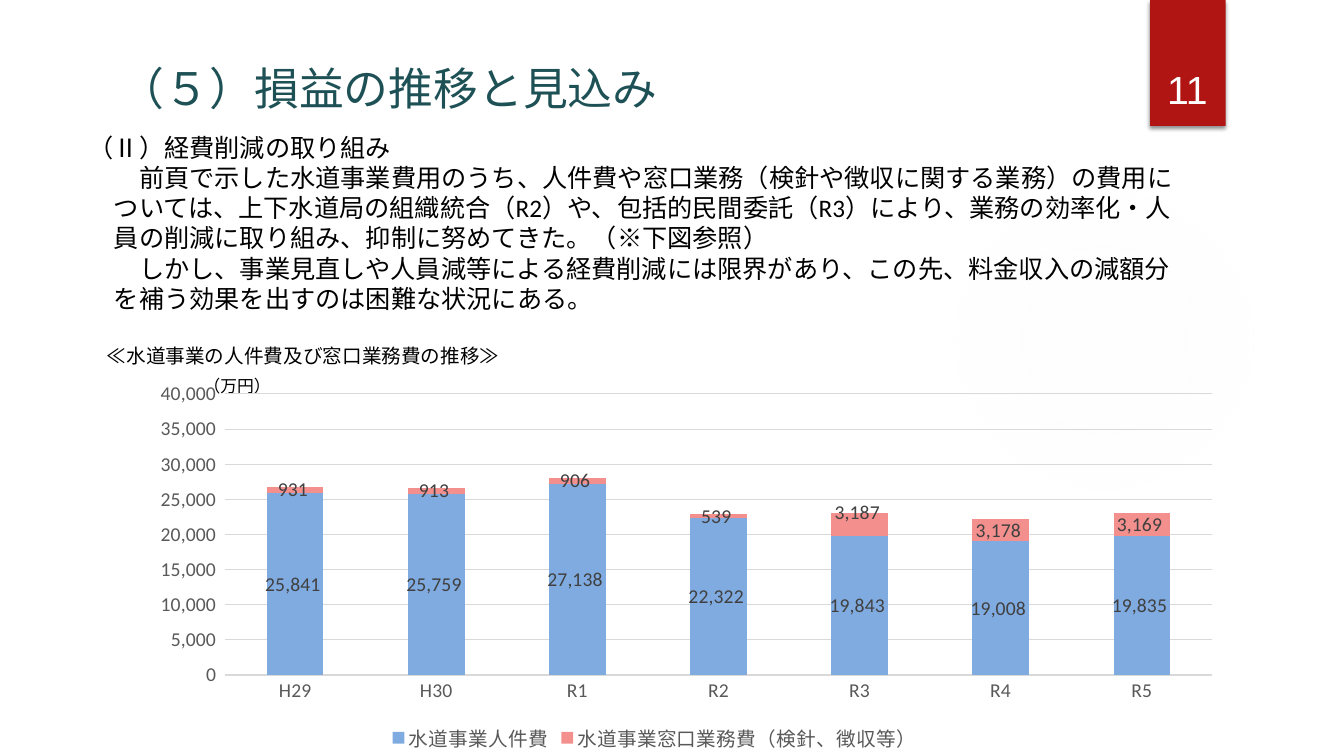
from dataclasses import dataclass

from lxml import etree
from pptx import Presentation
from pptx import util as u
from pptx.chart import data as chart_data
from pptx.dml.color import RGBColor
from pptx.enum import chart as chart_enum
from pptx.enum import shapes, text
from pptx.oxml import parse_xml
from pptx.oxml.ns import nsdecls, qn

Pt = u.Pt
NUMBER_FORMAT = r"#,##0_);[Red]\(#,##0\)"


@dataclass
class Box:
    left: float
    top: float
    width: float
    height: float

    def lengths(self) -> tuple:
        return Pt(self.left), Pt(self.top), Pt(self.width), Pt(self.height)


@dataclass
class Line:
    wording: str
    size: float
    face: str = "Calibri"
    color: str = "000000"
    indent: float = 0
    centered: bool = False


@dataclass
class Caption:
    box: Box
    line: Line


@dataclass
class Cost:
    name: str
    values: tuple
    color: str


def rgb(value: str) -> RGBColor:
    return RGBColor.from_string(value)


def style_font(font, size: float, color: str, face: str = "Calibri") -> None:
    font.size, font.name = Pt(size), face
    font.color.rgb = rgb(color)


def write_line(paragraph, line: Line) -> None:
    paragraph.text = line.wording
    if line.indent:
        paragraph._p.get_or_add_pPr().set("marL", str(Pt(line.indent)))
    if line.centered:
        paragraph.alignment = text.PP_ALIGN.CENTER
    style_font(paragraph.font, line.size, line.color, line.face)


def add_text(slide, box: Box, lines: list[Line], right_inset: float = 7.2) -> None:
    frame = slide.shapes.add_textbox(*box.lengths()).text_frame
    frame.word_wrap = True
    frame.margin_right = Pt(right_inset)
    frame.vertical_anchor = text.MSO_ANCHOR.BOTTOM
    for index, line in enumerate(lines):
        write_line(frame.add_paragraph() if index else frame.paragraphs[0], line)


def add_caption(slide, caption: Caption) -> None:
    table = slide.shapes.add_table(1, 1, *caption.box.lengths()).table
    table.first_row = table.horz_banding = False
    cell = table.cell(0, 0)
    cell.fill.background()
    cell.margin_left = cell.margin_right = cell.margin_top = cell.margin_bottom = 0
    cell.vertical_anchor = text.MSO_ANCHOR.MIDDLE
    write_line(cell.text_frame.paragraphs[0], caption.line)


def add_plain_shape(slide, kind, box: Box):
    shape = slide.shapes.add_shape(kind, *box.lengths())
    shape.shadow.inherit = False
    shape.line.fill.background()
    return shape


def add_glow(slide, box: Box) -> None:
    glow = add_plain_shape(slide, shapes.MSO_SHAPE.OVAL, box)
    stops = "".join(
        f'<a:gs pos="{position * 1000}"><a:srgbClr val="F3F3F3">'
        f'<a:alpha val="{alpha * 1000}"/></a:srgbClr></a:gs>'
        for position, alpha in ((0, 7), (36, 6), (69, 0))
    )
    glow._element.spPr.find(qn("a:prstGeom")).addnext(parse_xml(
        f'<a:gradFill {nsdecls("a")}><a:gsLst>{stops}</a:gsLst><a:path path="circle">'
        '<a:fillToRect l="50000" t="50000" r="50000" b="50000"/></a:path></a:gradFill>'
    ))


def add_ribbon(slide, box: Box) -> None:
    ribbon = add_plain_shape(slide, shapes.MSO_SHAPE.RECTANGLE, box)
    ribbon.fill.solid()
    ribbon.fill.fore_color.rgb = rgb("B01513")
    ribbon._element.spPr.find(qn("a:effectLst")).append(parse_xml(
        f'<a:outerShdw {nsdecls("a")} blurRad="{Pt(3)}" dist="{Pt(2)}" dir="5400000">'
        '<a:srgbClr val="000000"><a:alpha val="45000"/></a:srgbClr></a:outerShdw>'
    ))


def manual_layout(**settings):
    layout = etree.Element(qn("c:layout"))
    manual = etree.SubElement(layout, qn("c:manualLayout"))
    for tag, value in settings.items():
        etree.SubElement(manual, qn(f"c:{tag}")).set("val", str(value))
    return layout


def style_line(line, color: str) -> None:
    line.width = Pt(0.75)
    line.color.rgb = rgb(color)


def raise_label(series, index: int, offset: float) -> None:
    style_font(series.points[index].data_label.font, 14, "404040")
    label = series._element.find(f".//{qn('c:dLbl')}")
    label.insert(1, manual_layout(x=0, y=offset))
    number_format = etree.Element(qn("c:numFmt"))
    number_format.set("formatCode", NUMBER_FORMAT)
    number_format.set("sourceLinked", "0")
    label.insert(2, number_format)


def add_cost_chart(slide, box: Box, years: list[str], costs: list[Cost]) -> None:
    data = chart_data.CategoryChartData(number_format=NUMBER_FORMAT)
    data.categories = years
    for cost in costs:
        data.add_series(cost.name, cost.values)
    chart = slide.shapes.add_chart(
        chart_enum.XL_CHART_TYPE.COLUMN_STACKED, *box.lengths(), data
    ).chart
    style_font(chart.font, 10, "000000")
    chart.has_title = False
    chart.has_legend = True
    chart.legend.position = chart_enum.XL_LEGEND_POSITION.BOTTOM
    chart.legend.include_in_layout = False
    style_font(chart.legend.font, 14, "595959")

    for axis in (chart.category_axis, chart.value_axis):
        axis.major_tick_mark = axis.minor_tick_mark = chart_enum.XL_TICK_MARK.NONE
        style_font(axis.tick_labels.font, 14, "595959")
    style_line(chart.category_axis.format.line, "D9D9D9")
    amounts = chart.value_axis
    amounts.minimum_scale, amounts.maximum_scale, amounts.major_unit = 0, 40000, 5000
    amounts.format.line.fill.background()
    style_line(amounts.major_gridlines.format.line, "D9D9D9")
    amounts.tick_labels.number_format = NUMBER_FORMAT
    amounts.tick_labels.number_format_is_linked = False

    plot = chart.plots[0]
    plot.gap_width, plot.overlap, plot.vary_by_categories = 150, 100, False
    for series, cost in zip(plot.series, costs):
        series.format.fill.solid()
        series.format.fill.fore_color.rgb = rgb(cost.color)
        labels = series.data_labels
        labels.show_value = True
        labels.number_format = NUMBER_FORMAT
        labels.number_format_is_linked = False
        style_font(labels.font, 14, "404040")
    raise_label(plot.series[1], years.index("R3"), -0.03)

    area = chart._chartSpace.find(f".//{qn('c:plotArea')}")
    for layout in area.findall(qn("c:layout")):
        area.remove(layout)
    area.insert(0, manual_layout(
        layoutTarget="inner", xMode="edge", yMode="edge", x=0.13, y=0.06, w=0.85, h=0.73
    ))


def main() -> None:
    deck = Presentation()
    deck.slide_width, deck.slide_height = Pt(960), Pt(540)
    slide = deck.slides.add_slide(deck.slide_layouts[6])

    add_glow(slide, Box(677.5, 131.8, 221.8, 221.8))
    add_ribbon(slide, Box(821.5, 0, 54, 90))
    add_text(slide, Box(815, 23, 66.2, 60.5),
             [Line("11", 28, "Arial", "FFFFFF", centered=True)])
    efforts = [
        Line("（Ⅱ）経費削減の取り組み", 18, "Arial"),
        Line("前頁で示した水道事業費用のうち、人件費や窓口業務（検針や徴収に関する業務）の費用に", 18, indent=36),
        Line("ついては、上下水道局の組織統合（R2）や、包括的民間委託（R3）により、業務の効率化・人", 18, indent=18),
        Line("員の削減に取り組み、抑制に努めてきた。（※下図参照）", 18, indent=18),
        Line("しかし、事業見直しや人員減等による経費削減には限界があり、この先、料金収入の減額分", 18, indent=36),
        Line("を補う効果を出すのは困難な状況にある。", 18, indent=18),
    ]
    captions = [
        Caption(Box(145.4, 260, 54, 30.2), Line("（万円）", 12, "Arial")),
        Caption(Box(76.3, 238.3, 357.8, 30.2),
                Line("≪水道事業の人件費及び窓口業務費の推移≫", 14, "Arial")),
    ]
    for caption in captions:
        add_caption(slide, caption)
    add_text(slide, Box(56.2, 79.2, 804, 148.3), efforts, right_inset=0)
    add_cost_chart(
        slide, Box(52.6, 264.9, 830, 275.1),
        ["H29", "H30", "R1", "R2", "R3", "R4", "R5"],
        [
            Cost("水道事業人件費",
                 (25841, 25759, 27138, 22322, 19843, 19008, 19835), "80ABE0"),
            Cost("水道事業窓口業務費（検針、徴収等）",
                 (931, 913, 906, 539, 3187, 3178, 3169), "F38F8D"),
        ],
    )
    add_text(slide, Box(78.5, 25.2, 694.8, 60.5),
             [Line("（５）損益の推移と見込み", 32, color="1E5155")])
    deck.save("out.pptx")


if __name__ == "__main__":
    main()
